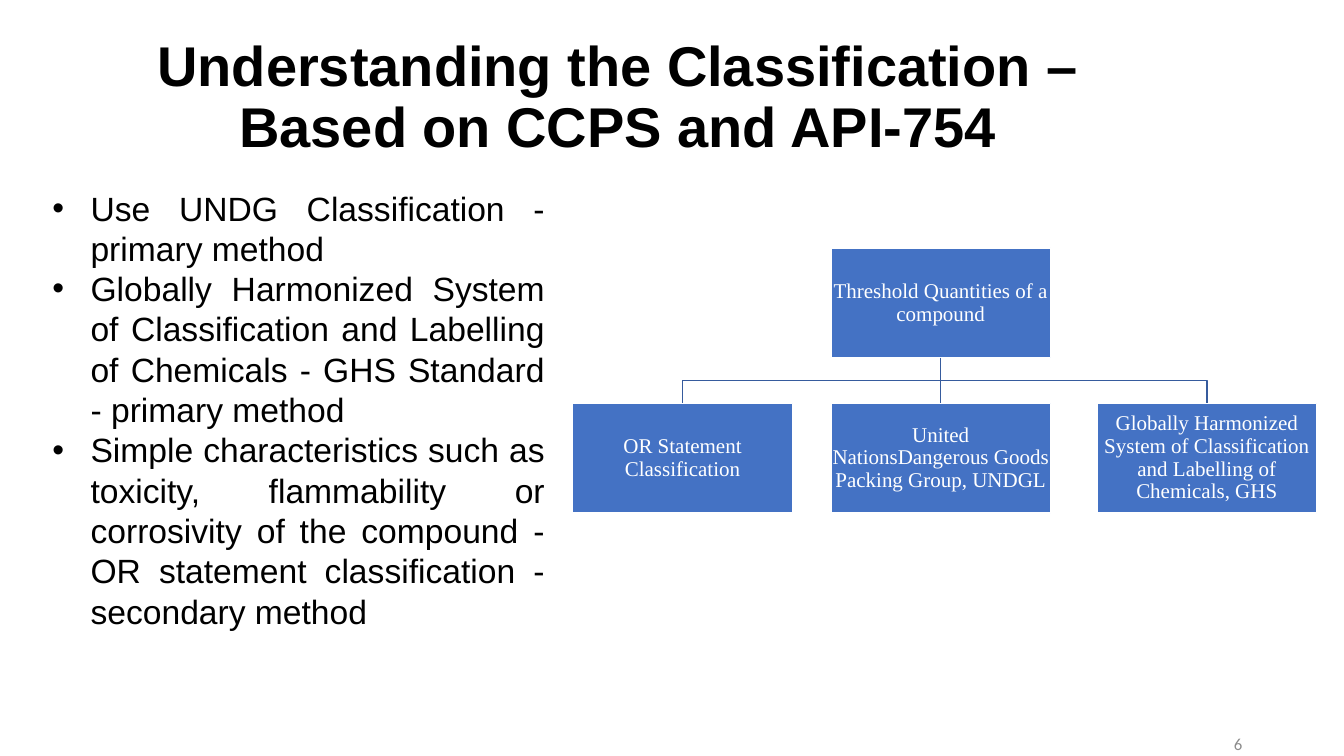
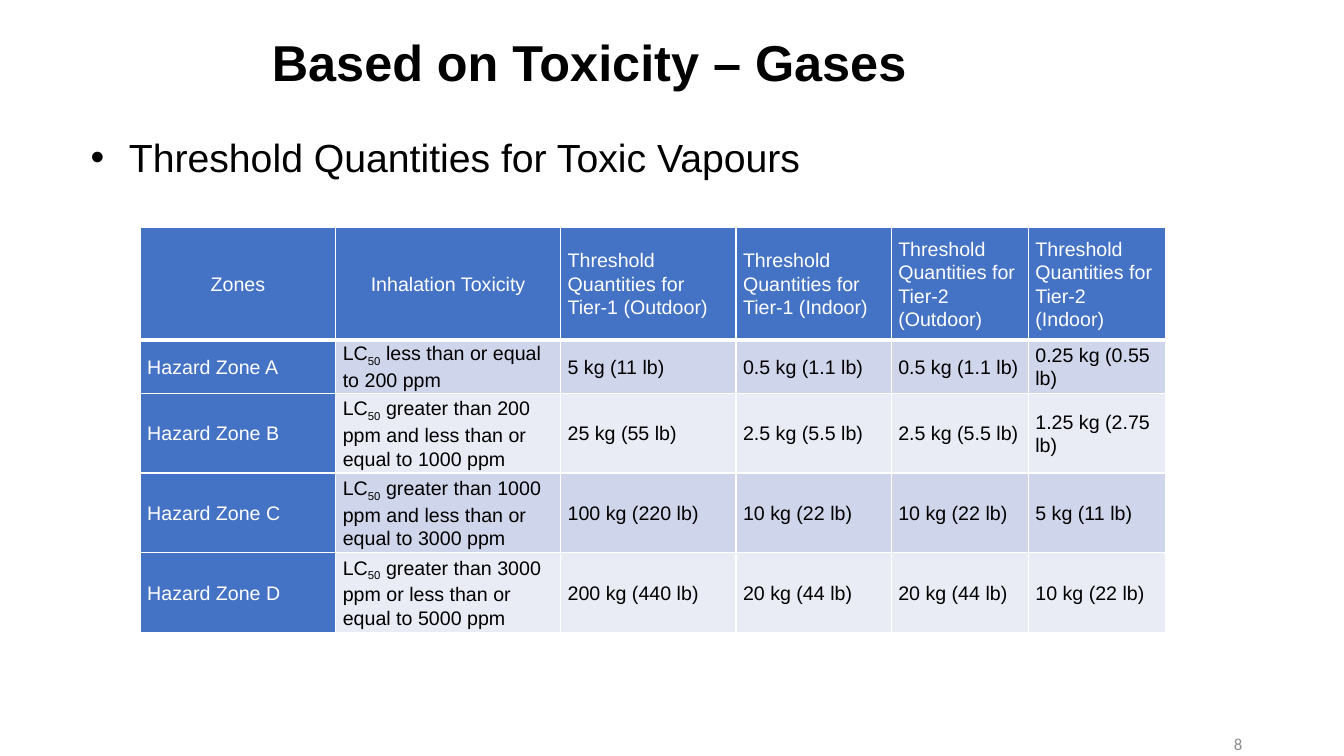
from lxml import etree
from pptx import Presentation
from pptx.dml.color import RGBColor
from pptx.enum import shapes, text
from pptx.oxml import ns
from pptx.util import Inches, Pt

COLORS = {
    "text": "000000",
    "white": "FFFFFF",
    "blue": "4472C4",
    "link": "365B9D",
    "band_dark": "CFD5EA",
    "band_light": "E9EBF5",
    "page": "8C8C8C",
}
FONT, CHART_FONT, PAGE_FONT = "Arial", "Times New Roman", "Calibri"
LEFT, CENTER, RIGHT, JUSTIFY = (
    text.PP_ALIGN.LEFT, text.PP_ALIGN.CENTER, text.PP_ALIGN.RIGHT, text.PP_ALIGN.JUSTIFY)

NODE_WIDTH, NODE_HEIGHT, LEVEL_GAP = 2.18, 1.09, 0.45
ROOT_LABEL = "Threshold Quantities of a compound"
BRANCHES = [
    (0, "OR Statement Classification"),
    (2.56, "United NationsDangerous Goods Packing Group, UNDGL"),
    (5.2, "Globally Harmonized System of Classification and Labelling of Chemicals, GHS"),
]
ROOT_OFFSET = BRANCHES[1][0]

METHODS = [
    "Use UNDG Classification - primary method",
    "Globally Harmonized System of Classification and Labelling of Chemicals"
    " - GHS Standard - primary method",
    "Simple characteristics such as toxicity, flammability or corrosivity of the compound"
    " - OR statement classification - secondary method",
]

COLUMN_WIDTHS = [1.94, 2.23, 1.74, 1.54, 1.36, 1.36]
ROW_HEIGHTS = [1.11, 0.53, 0.79, 0.79, 0.79]
HEADINGS = ["Zones", "Inhalation Toxicity"] + [
    f"Threshold Quantities for Tier-{tier} ({place})"
    for tier in (1, 2) for place in ("Outdoor", "Indoor")]
ZONES = [
    ("A", "less than or equal to 200 ppm",
     "5 kg (11 lb)", "0.5 kg (1.1 lb)", "0.5 kg (1.1 lb)", "0.25 kg (0.55 lb)"),
    ("B", "greater than 200 ppm and less than or equal to 1000 ppm",
     "25 kg (55 lb)", "2.5 kg (5.5 lb)", "2.5 kg (5.5 lb)", "1.25 kg (2.75 lb)"),
    ("C", "greater than 1000 ppm and less than or equal to 3000 ppm",
     "100 kg (220 lb)", "10 kg (22 lb)", "10 kg (22 lb)", "5 kg (11 lb)"),
    ("D", "greater than 3000 ppm or less than or equal to 5000 ppm",
     "200 kg (440 lb)", "20 kg (44 lb)", "20 kg (44 lb)", "10 kg (22 lb)"),
]


def color(name):
    return RGBColor.from_string(COLORS[name])


def style_font(font, name, size, color_name, bold=False):
    font.name = name
    font.size = Pt(size)
    font.bold = bold
    font.color.rgb = color(color_name)


def add_text(slide, box, content, size, font=FONT, color_name="text", bold=False,
             align=LEFT, spacing=None, anchor=text.MSO_ANCHOR.TOP):
    frame = slide.shapes.add_textbox(*map(Inches, box)).text_frame
    frame.word_wrap = True
    frame.vertical_anchor = anchor
    frame.text = content
    for paragraph in frame.paragraphs:
        paragraph.alignment = align
        paragraph.line_spacing = spacing
        for run in paragraph.runs:
            style_font(run.font, font, size, color_name, bold)
    return frame


def add_title(slide, box, content, size):
    add_text(slide, box, content, size, bold=True, align=CENTER, spacing=0.9)


def add_page_number(slide, number):
    add_text(slide, (9.42, 7.18, 3, 0.4), str(number), 12, PAGE_FONT, "page",
             align=RIGHT, anchor=text.MSO_ANCHOR.MIDDLE)


def add_bullets(slide, box, items, size, align=LEFT):
    frame = add_text(slide, box, "\n".join(items), size, align=align)
    frame.auto_size = text.MSO_AUTO_SIZE.SHAPE_TO_FIT_TEXT
    for paragraph in frame.paragraphs:
        properties = paragraph._p.get_or_add_pPr()
        properties.set("marL", str(Inches(0.38)))
        properties.set("indent", str(Inches(-0.38)))
        etree.SubElement(properties, ns.qn("a:buFont"), typeface=FONT)
        etree.SubElement(properties, ns.qn("a:buChar"), char="•")


def add_node(slide, left, top, label):
    node = slide.shapes.add_shape(
        shapes.MSO_SHAPE.RECTANGLE, *map(Inches, (left, top, NODE_WIDTH, NODE_HEIGHT)))
    node.shadow.inherit = False
    node.fill.solid()
    node.fill.fore_color.rgb = color("blue")
    node.line.color.rgb = color("white")
    node.line.width = Pt(1)
    frame = node.text_frame
    frame.word_wrap = True
    frame.vertical_anchor = text.MSO_ANCHOR.MIDDLE
    frame.margin_left = frame.margin_right = Inches(0.01)
    frame.margin_top = frame.margin_bottom = Inches(0.01)
    frame.text = label
    paragraph = frame.paragraphs[0]
    paragraph.alignment = CENTER
    paragraph.line_spacing = 0.9
    style_font(paragraph.runs[0].font, CHART_FONT, 15, "white")
    return node


def style_link(link):
    link.line.color.rgb = color("link")
    link.line.width = Pt(1)


def add_elbow(slide, parent, child):
    start_x = parent.left + parent.width // 2
    start_y = parent.top + parent.height
    end_x = child.left + child.width // 2
    middle_y = (start_y + child.top) // 2
    builder = slide.shapes.build_freeform(start_x, start_y)
    builder.add_line_segments(
        [(start_x, middle_y), (end_x, middle_y), (end_x, child.top)], close=False)
    elbow = builder.convert_to_shape()
    elbow.shadow.inherit = False
    elbow.fill.background()
    style_link(elbow)


def add_straight_link(slide, parent, child):
    link = slide.shapes.add_connector(shapes.MSO_CONNECTOR.STRAIGHT, 0, 0, 0, 0)
    link.begin_connect(parent, 2)
    link.end_connect(child, 0)
    style_link(link)
    etree.SubElement(link._element.spPr, ns.qn("a:effectLst"))


def add_hierarchy(slide, left, top):
    root = add_node(slide, left + ROOT_OFFSET, top, ROOT_LABEL)
    for offset, label in BRANCHES:
        child = add_node(slide, left + offset, top + NODE_HEIGHT + LEVEL_GAP, label)
        connect = add_straight_link if offset == ROOT_OFFSET else add_elbow
        connect(slide, root, child)


def set_borders(cell, bottom_width):
    properties = cell._tc.get_or_add_tcPr()
    widths = {"a:lnL": 1, "a:lnR": 1, "a:lnT": 1, "a:lnB": bottom_width}
    for index, (tag, width) in enumerate(widths.items()):
        border = etree.Element(ns.qn(tag), w=str(Pt(width)))
        fill = etree.SubElement(border, ns.qn("a:solidFill"))
        etree.SubElement(fill, ns.qn("a:srgbClr"), val=COLORS["white"])
        properties.insert(index, border)


def fill_cell(cell, parts, fill_name, color_name, align=LEFT, bottom_width=1):
    cell.fill.solid()
    cell.fill.fore_color.rgb = color(fill_name)
    cell.vertical_anchor = text.MSO_ANCHOR.MIDDLE
    cell.margin_left = cell.margin_right = Inches(0.07)
    cell.margin_top = cell.margin_bottom = 0
    set_borders(cell, bottom_width)
    paragraph = cell.text_frame.paragraphs[0]
    paragraph.alignment = align
    paragraph.line_spacing = 1.07
    paragraph.space_after = Pt(8)
    for index, part in enumerate(parts):
        run = paragraph.add_run()
        run.text = part
        style_font(run.font, FONT, 14, color_name)
        if index == 1:
            run.font._element.set("baseline", "-25000")


def add_zone_table(slide, left, top):
    table = slide.shapes.add_table(
        len(ROW_HEIGHTS), len(COLUMN_WIDTHS), Inches(left), Inches(top),
        Inches(sum(COLUMN_WIDTHS)), Inches(sum(ROW_HEIGHTS))).table
    for column, width in zip(table.columns, COLUMN_WIDTHS):
        column.width = Inches(width)
    for row, height in zip(table.rows, ROW_HEIGHTS):
        row.height = Inches(height)
    for column, heading in enumerate(HEADINGS):
        fill_cell(table.cell(0, column), [heading], "blue", "white",
                  CENTER if column < 2 else LEFT, bottom_width=3)
    for row, (zone, toxicity, *quantities) in enumerate(ZONES, 1):
        band = "band_dark" if row % 2 else "band_light"
        fill_cell(table.cell(row, 0), [f"Hazard Zone {zone}"], "blue", "white")
        fill_cell(table.cell(row, 1), ["LC", "50", f" {toxicity}"], band, "text")
        for column, quantity in enumerate(quantities, 2):
            fill_cell(table.cell(row, column), [quantity], band, "text")


def new_slide(presentation, number):
    slide = presentation.slides.add_slide(presentation.slide_layouts[6])
    add_page_number(slide, number)
    return slide


def build_classification(presentation):
    slide = new_slide(presentation, 6)
    add_bullets(slide, (0.42, 1.81, 5.08, 5.02), METHODS, 24, JUSTIFY)
    add_title(slide, (0.8, 0.33, 10.65, 1.29),
              "Understanding the Classification – Based on CCPS and API-754", 40)
    add_hierarchy(slide, 5.68, 2.46)


def build_toxicity(presentation):
    slide = new_slide(presentation, 8)
    add_bullets(slide, (0.8, 1.27, 7.28, 0.57), ["Threshold Quantities for Toxic Vapours"], 28)
    add_title(slide, (0.52, 0.33, 10.65, 0.65), "Based on Toxicity – Gases", 36)
    add_zone_table(slide, 1.39, 2.26)


def main():
    presentation = Presentation()
    presentation.slide_width = Inches(13.33)
    presentation.slide_height = Inches(7.5)
    build_classification(presentation)
    build_toxicity(presentation)
    presentation.save("out.pptx")


if __name__ == "__main__":
    main()
